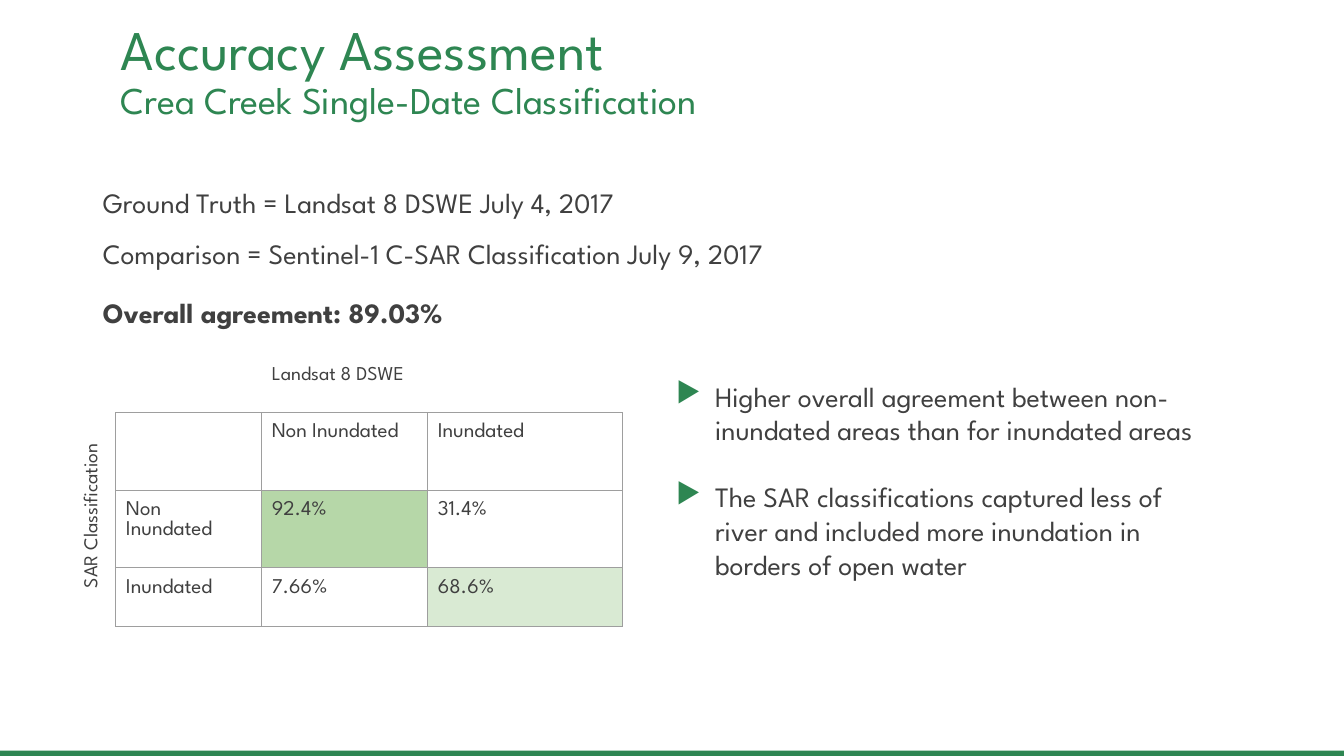
from lxml import etree
from pptx import Presentation
from pptx.dml.color import RGBColor
from pptx.enum.shapes import MSO_SHAPE as Shape
from pptx.enum.text import MSO_ANCHOR as Anchor
from pptx.oxml.ns import qn
from pptx.util import Emu, Pt

FONT = "League Spartan"
GREEN = RGBColor(0x2E, 0x86, 0x52)
GRAY = RGBColor(0x40, 0x40, 0x40)
BORDER = RGBColor(0x9E, 0x9E, 0x9E)
STRONG = RGBColor(0xB6, 0xD7, 0xA8)
LIGHT = RGBColor(0xD9, 0xEA, 0xD3)

COLUMNS = (139, 158, 186)
ROWS = (54, 74, 74, 56)
MATRIX = (
    ("", "Landsat 8 DSWE", ""),
    ("", "Non Inundated", "Inundated"),
    ("Non Inundated", "92.4%", "31.4%"),
    ("Inundated", "7.66%", "68.6%"),
)
HIGHLIGHTS = {(2, 1): STRONG, (3, 2): LIGHT}
FINDINGS = (
    "Higher overall agreement between non-inundated areas than for inundated areas",
    "The SAR classifications captured less of river and included more "
    "inundation in borders of open water",
)


def px(count):
    return Emu(count * 9525)


def style(para, size, color=GRAY, bold=False):
    for span in para.runs:
        span.font.name = FONT
        span.font.size = Pt(size)
        span.font.color.rgb = color
        span.font.bold = bold


def add_text(page, area, lines, sizes, color=GRAY, bold=False, inset=10, spacing=None):
    box = page.shapes.add_textbox(*map(px, area))
    frame = box.text_frame
    frame.word_wrap = True
    frame.margin_left = frame.margin_right = px(10)
    frame.margin_top = frame.margin_bottom = px(inset)
    frame.text = "\n".join(lines)
    for para, size in zip(frame.paragraphs, sizes):
        if spacing:
            para.line_spacing = spacing
        style(para, size, color, bold)
    return box


def add_bullet(para):
    props = para._p.get_or_add_pPr()
    props.set("marL", str(px(48)))
    props.set("indent", str(px(-37)))
    color = etree.SubElement(props, qn("a:buClr"))
    etree.SubElement(color, qn("a:srgbClr"), val=str(GREEN))
    etree.SubElement(props, qn("a:buChar"), char="▶")


def add_borders(cell, sides):
    props = cell._tc.get_or_add_tcPr()
    for position, side in enumerate(sides):
        line = etree.Element(qn(f"a:ln{side}"), w=str(Pt(0.75)))
        fill = etree.SubElement(line, qn("a:solidFill"))
        etree.SubElement(fill, qn("a:srgbClr"), val=str(BORDER))
        props.insert(position, line)


def add_matrix(page, left, top):
    frame = page.shapes.add_table(
        len(ROWS), len(COLUMNS), px(left), px(top), px(sum(COLUMNS)), px(sum(ROWS)))
    table = frame.table
    table.first_row = table.horz_banding = False
    for column, width in zip(table.columns, COLUMNS):
        column.width = px(width)
    for row, height in zip(table.rows, ROWS):
        row.height = px(height)
    table.cell(0, 1).merge(table.cell(0, 2))

    for r, texts in enumerate(MATRIX):
        for c, text in enumerate(texts):
            cell = table.cell(r, c)
            cell.margin_left = cell.margin_right = px(10)
            cell.margin_top = cell.margin_bottom = px(10)
            if text:
                cell.text = text
                style(cell.text_frame.paragraphs[0], 15 if r else 14)
            if (r, c) in HIGHLIGHTS:
                cell.fill.solid()
                cell.fill.fore_color.rgb = HIGHLIGHTS[r, c]
            else:
                cell.fill.background()
            add_borders(cell, "LRTB" if r else "B")


def add_footer_bar(page):
    bar = page.shapes.add_shape(Shape.RECTANGLE, *map(px, (0, 715, 1280, 5)))
    bar.shadow.inherit = False
    bar.fill.solid()
    bar.fill.fore_color.rgb = GREEN
    bar.line.fill.background()


def main():
    deck = Presentation()
    deck.slide_width, deck.slide_height = px(1280), px(720)
    page = deck.slides.add_slide(deck.slide_layouts[6])
    add_footer_bar(page)

    # Heading
    title = add_text(
        page, (105, 44, 988, 50),
        ("Accuracy Assessment", "Crea Creek Single-Date Classification"),
        (40, 27), color=GREEN, inset=5, spacing=0.9)
    title.text_frame.vertical_anchor = Anchor.MIDDLE

    # Data sources and overall result
    add_text(
        page, (88, 156, 795, 107),
        ("Ground Truth = Landsat 8 DSWE July 4, 2017",
         "Comparison = Sentinel-1 C-SAR Classification July 9, 2017"),
        (20, 20), inset=5, spacing=1.5)
    add_text(page, (88, 271, 375, 30), ("Overall agreement: 89.03%",), (20,), bold=True)

    # Agreement matrix with its side label
    add_matrix(page, 110, 339)
    side_label = add_text(page, (-14, 458, 190, 34), ("SAR Classification",), (14,))
    side_label.rotation = 270

    # Findings
    findings = add_text(page, (623, 351, 541, 278), FINDINGS, (20, 20))
    for number, para in enumerate(findings.text_frame.paragraphs):
        if number:
            para.space_before = Pt(24)
        add_bullet(para)

    deck.save("out.pptx")


if __name__ == "__main__":
    main()
